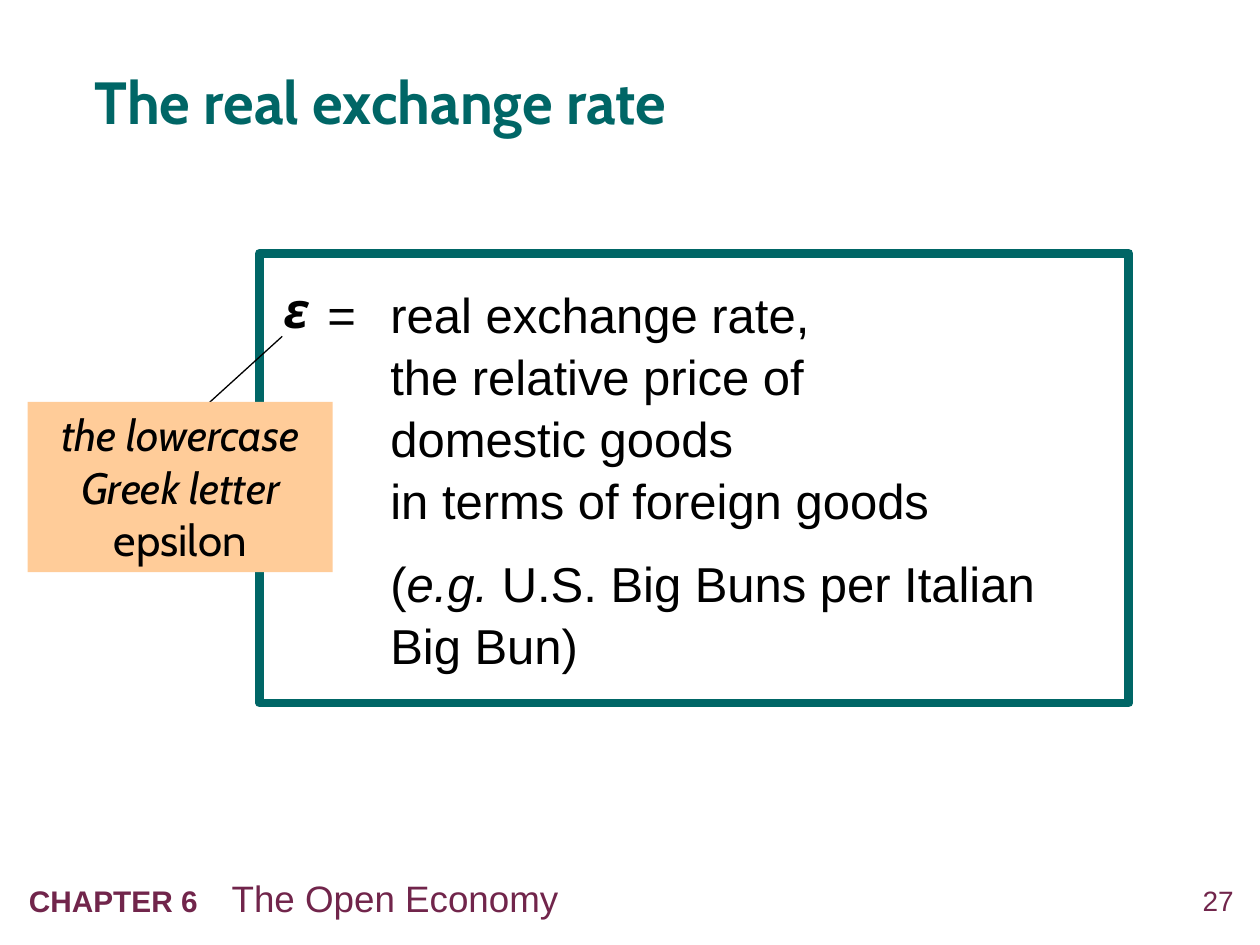
from pptx import Presentation
from pptx.dml.color import RGBColor
from pptx.enum.shapes import MSO_CONNECTOR, MSO_SHAPE
from pptx.enum.text import MSO_ANCHOR, PP_ALIGN
from pptx.oxml.ns import qn
from pptx.util import Inches, Pt
from lxml import etree

TEAL = RGBColor(0x00, 0x66, 0x66)
PLUM = RGBColor(0x71, 0x25, 0x4B)
PEACH = RGBColor(0xFF, 0xCC, 0x99)
BLACK = RGBColor(0, 0, 0)

# Run formats
TITLE = dict(name="Cabin", size=Pt(34), bold=True, color=TEAL)
BODY = dict(name="Arial", size=Pt(28), color=BLACK)
BODY_ITALIC = dict(BODY, italic=True)
NOTE = dict(name="Cabin", size=Pt(25), color=BLACK)
NOTE_ITALIC = dict(NOTE, italic=True)
SYMBOL = dict(name="Cabin", size=Pt(28), bold=True, italic=True, color=BLACK)
CHAPTER = dict(name="Arial", size=Pt(17), bold=True, color=PLUM)
BOOK_PART = dict(name="Arial", size=Pt(21), color=PLUM)
PAGE = dict(name="Arial", size=Pt(16), color=PLUM)

# Paragraph formats
BODY_SPACING = dict(line_spacing=1.05, space_before=Pt(12.6))
CENTERED = dict(alignment=PP_ALIGN.CENTER)

# Each paragraph: (paragraph format, left margin, first-line indent, runs)
PAGE_NUMBER = [(dict(alignment=PP_ALIGN.RIGHT), 0, 0, [("27", PAGE)])]
FOOTER = [({}, 1.61, -1.61, [("CHAPTER 6\t", CHAPTER), ("The Open Economy", BOOK_PART)])]
HEADING = [(dict(line_spacing=1.05), 0, 0, [("The real exchange rate", TITLE)])]
DEFINITION = [
    (BODY_SPACING, 0.94, -0.5, [
        ("=\treal exchange rate, \nthe relative price of \n"
         "domestic goods \nin terms of foreign goods", BODY)]),
    (BODY_SPACING, 0.94, 0, [
        ("(", BODY), ("e.g. ", BODY_ITALIC),
        ("U.S. Big Buns per Italian Big Bun)", BODY)]),
]
EXPLANATION = [(CENTERED, 0, 0, [
    ("the lowercase Greek letter ", NOTE_ITALIC), ("epsilon", NOTE)])]
EPSILON = [(CENTERED, 0, 0, [("ε", SYMBOL)])]


def add_run(paragraph, text, style):
    """Add text in one style; newlines become line breaks."""
    for number, line in enumerate(text.split("\n")):
        if number:
            paragraph.add_line_break()
        run = paragraph.add_run()
        run.text = line
        for key, value in style.items():
            if key == "color":
                run.font.color.rgb = value
            else:
                setattr(run.font, key, value)


def write(shape, paragraphs, anchor=MSO_ANCHOR.TOP, inset=True):
    frame = shape.text_frame
    frame.word_wrap = True
    frame.vertical_anchor = anchor
    if not inset:
        for side in ("left", "top", "right", "bottom"):
            setattr(frame, f"margin_{side}", 0)
    for number, (layout, margin, indent, runs) in enumerate(paragraphs):
        paragraph = frame.add_paragraph() if number else frame.paragraphs[0]
        for key, value in {"alignment": PP_ALIGN.LEFT, **layout}.items():
            setattr(paragraph, key, value)
        properties = paragraph._p.get_or_add_pPr()
        properties.set("marL", str(Inches(margin)))
        properties.set("indent", str(Inches(indent)))
        for text, style in runs:
            add_run(paragraph, text, style)


def add_text(slide, box, paragraphs, **options):
    write(slide.shapes.add_textbox(*map(Inches, box)), paragraphs, **options)


def add_box(slide, box, paragraphs, fill=None, line=None, **options):
    shape = slide.shapes.add_shape(MSO_SHAPE.RECTANGLE, *map(Inches, box))
    shape.shadow.inherit = False
    if fill is None:
        shape.fill.background()
    else:
        shape.fill.solid()
        shape.fill.fore_color.rgb = fill
    if line is None:
        shape.line.fill.background()
    else:
        shape.line.color.rgb = line
        shape.line.width = Pt(5)
    write(shape, paragraphs, **options)


def add_pointer(slide, start, end):
    pointer = slide.shapes.add_connector(
        MSO_CONNECTOR.STRAIGHT, *map(Inches, start + end))
    pointer.line.color.rgb = BLACK
    pointer.line.width = Pt(0.75)
    etree.SubElement(pointer._element.spPr, qn("a:effectLst"))


def main():
    presentation = Presentation()
    presentation.slide_width = Inches(10)
    presentation.slide_height = Inches(7.5)
    slide = presentation.slides.add_slide(presentation.slide_layouts[6])

    add_text(slide, (9.24, 7.01, 0.55, 0.32), PAGE_NUMBER, inset=False)
    add_text(slide, (0.13, 6.9, 8.18, 0.45), FOOTER)
    add_text(slide, (0.75, 0.26, 8.7, 1.05), HEADING,
             anchor=MSO_ANCHOR.MIDDLE, inset=False)
    add_box(slide, (2.06, 2.01, 6.9, 3.57), DEFINITION, line=TEAL,
            anchor=MSO_ANCHOR.MIDDLE)
    add_pointer(slide, (2.24, 2.67), (1.59, 3.26))
    add_box(slide, (0.22, 3.19, 2.42, 1.35), EXPLANATION, fill=PEACH)
    add_text(slide, (2.14, 2.17, 0.42, 0.57), EPSILON)

    presentation.save("out.pptx")


if __name__ == "__main__":
    main()
